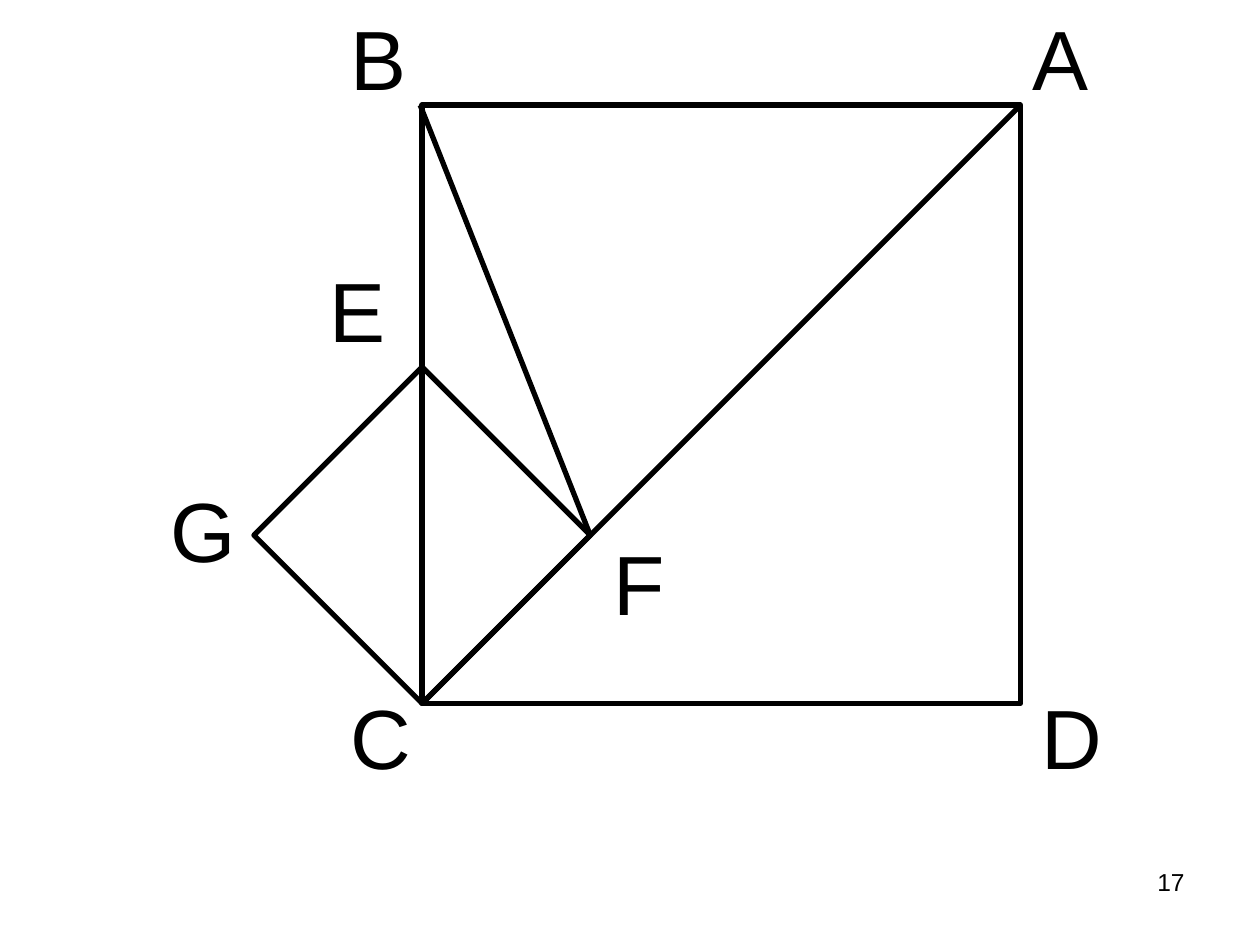
from typing import NamedTuple

from lxml.etree import SubElement
from pptx import Presentation
from pptx.dml.color import RGBColor
from pptx.enum.shapes import MSO_CONNECTOR, MSO_SHAPE
from pptx.enum.text import PP_ALIGN
from pptx.oxml.ns import qn
from pptx.util import Cm, Pt

BLACK = "000000"
LINE_WIDTH = 3
LEFT, TOP, SIDE = 8.51, 2.12, 12.06
RIGHT, BOTTOM = LEFT + SIDE, TOP + SIDE
DIAGONAL = 6.78


class Point(NamedTuple):
    x: float
    y: float


class Label(NamedTuple):
    text: str
    x: float
    y: float
    w: float
    h: float = 2.29
    size: int = 48
    align: PP_ALIGN = PP_ALIGN.LEFT
    wrap: bool = True


LABELS = [
    Label("A", RIGHT, 0, 3.61),
    Label("B", 6.81, 0, 1.7),
    Label("C", 6.81, 13.69, 1.8),
    Label("D", 20.75, 13.69, 1.73, wrap=False),
    Label("E", 6.4, 5.08, 1.4),
    Label("F", 12.12, 10.59, 2.18),
    Label("G", 3.18, 9.53, 1.83),
    Label("17", 18.21, 17.35, 5.92, 1.32, 14, PP_ALIGN.RIGHT),
]


def rgb(value: str) -> RGBColor:
    return RGBColor.from_string(value)


def style_line(s) -> None:
    s.line.color.rgb = rgb(BLACK)
    s.line.width = Pt(LINE_WIDTH)


def add_outline(slide, kind: MSO_SHAPE, x: float, y: float, size: float):
    s = slide.shapes.add_shape(kind, Cm(x), Cm(y), Cm(size), Cm(size))
    s.shadow.inherit = False
    s.fill.background()
    style_line(s)
    return s


def add_segment(slide, start: Point, end: Point):
    s = slide.shapes.add_connector(
        MSO_CONNECTOR.STRAIGHT, Cm(start.x), Cm(start.y), Cm(end.x), Cm(end.y)
    )
    style_line(s)
    SubElement(s._element.spPr, qn("a:effectLst"))
    return s


def add_label(slide, label: Label) -> None:
    s = slide.shapes.add_textbox(
        Cm(label.x), Cm(label.y), Cm(label.w), Cm(label.h)
    )
    tf = s.text_frame
    tf.word_wrap = label.wrap
    tf.text = label.text
    p = tf.paragraphs[0]
    p.alignment = label.align
    r = p.runs[0]
    r.font.name = "Arial"
    r.font.size = Pt(label.size)
    r.font.color.rgb = rgb(BLACK)


def main() -> None:
    prs = Presentation()
    prs.slide_width, prs.slide_height = Cm(25.4), Cm(19.05)
    slide = prs.slides.add_slide(prs.slide_layouts[6])

    add_outline(slide, MSO_SHAPE.RECTANGLE, LEFT, TOP, SIDE)
    add_segment(slide, Point(LEFT, BOTTOM), Point(RIGHT, TOP))
    small_square = add_outline(
        slide, MSO_SHAPE.DIAMOND, LEFT - DIAGONAL / 2, BOTTOM - DIAGONAL, DIAGONAL
    )
    f = Point(LEFT + DIAGONAL / 2, BOTTOM - DIAGONAL / 2)
    segment_bf = add_segment(slide, Point(LEFT - 0.04, TOP), f)
    segment_bf.end_connect(small_square, 3)

    for label in LABELS:
        add_label(slide, label)
    prs.save("out.pptx")


if __name__ == "__main__":
    main()
